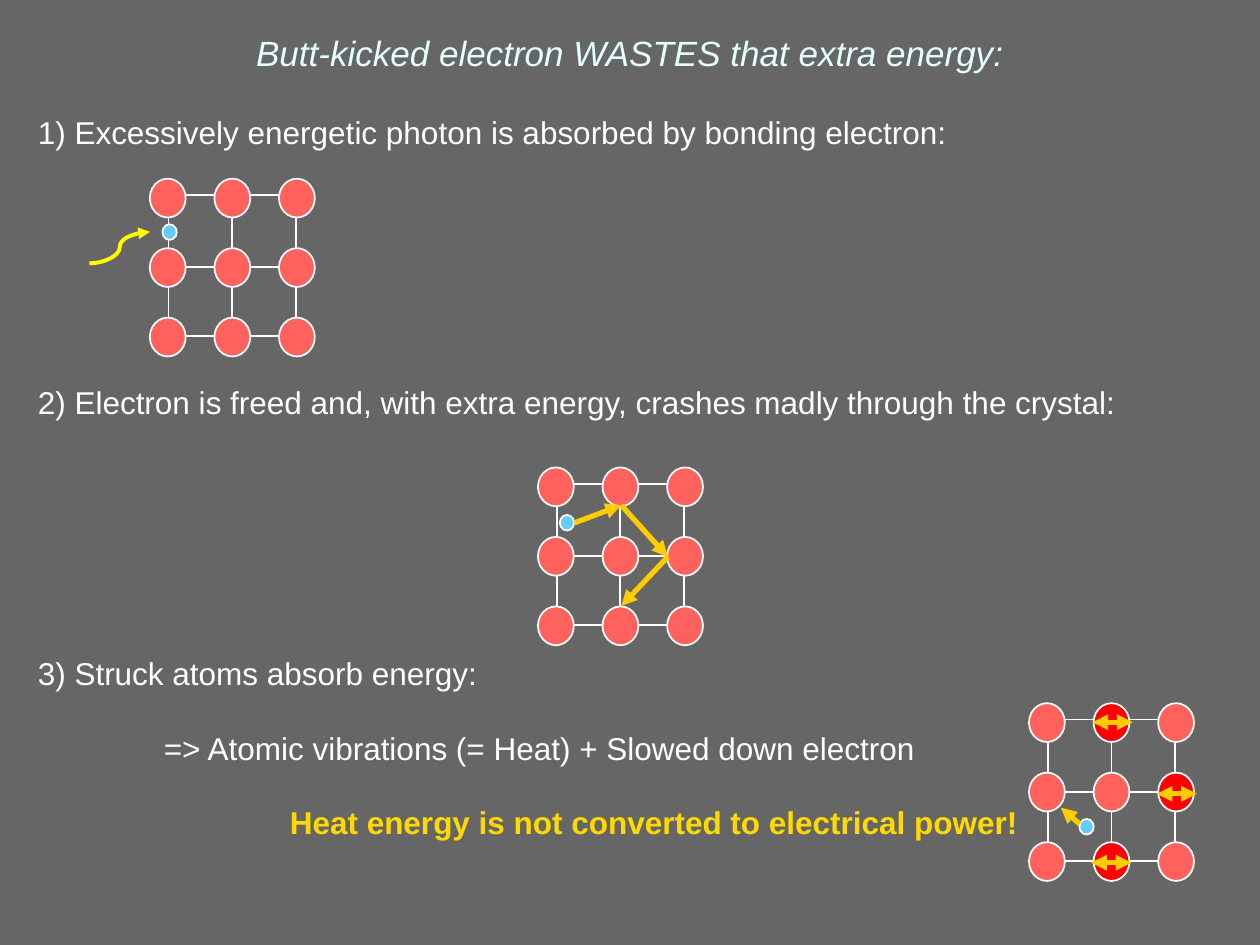
from pptx import Presentation
from pptx import util as u
from pptx.dml.color import RGBColor
from pptx.enum import shapes, text
from pptx.oxml.ns import qn
from lxml import etree

Pt = u.Pt
COLORS = {
    "background": "666666", "title": "E5FFFF", "body": "FFFFFF", "warning": "FFD900",
    "bond": "FFFFFF", "atom": "FF625C", "hot atom": "FF0000", "electron": "66CCFF",
    "photon": "FFFF00", "path": "FFCC00",
}
FONT = "Arial"

TITLE = "Butt-kicked electron WASTES that extra energy:"
# text, space before, left indent, format
STEPS = [
    ("1) Excessively energetic photon is absorbed by bonding electron:", 0, 0, {}),
    ("2) Electron is freed and, with extra energy, crashes madly through the crystal:",
     133, 0, {}),
    ("3) Struck atoms absorb energy:", 133, 0, {}),
    ("=> Atomic vibrations (= Heat) + Slowed down electron", 21, 72, {}),
    ("Heat energy is not converted to electrical power!", 21, 144,
     {"color": "warning", "bold": True}),
]

# Hot atoms are (column, row); arrows are (x1, y1, x2, y2)
CRYSTALS = [
    {"origin": (85.6, 102.1), "electron": (92.8, 128.2), "photon": (51.1, 150.5, 85.7, 132.5)},
    {"origin": (307.4, 267.1), "electron": (319.9, 294.3),
     "path": [(328.3, 298.8, 355, 288.7), (355, 288.7, 381.6, 318.2),
              (381.6, 318.2, 355, 346.3)]},
    {"origin": (588, 401.8), "electron": (616.8, 468),
     "hot": [(1, 0), (2, 1), (1, 2)],
     "path": [(617, 470.9, 606.2, 461.5)],
     "vibrations": [(647.3, 412.7, 624.2, 412.7), (646.6, 493, 623.5, 493),
                    (684, 453.6, 661, 453.6)]},
]
ATOM_SIZE = (20.5, 22.2)
ELECTRON_SIZE = (8.2, 8.9)
PITCH_X, PITCH_Y = 36.9, 39.7
# Bond lines, measured from the crystal's origin
ROW_BONDS, ROW_SPAN = (9.4, 50.6, 90.1), (9.4, 79.2)
COLUMN_BONDS, COLUMN_SPAN = (10.7, 47.1, 83.5), (9, 89)


def rgb(name):
    return RGBColor.from_string(COLORS[name])


def write(paragraph, content, size=18, color="body", bold=False, italic=False,
          align=text.PP_ALIGN.LEFT):
    paragraph.alignment = align
    run = paragraph.add_run()
    run.text = content
    font = run.font
    font.name, font.size, font.bold, font.italic = FONT, Pt(size), bold, italic
    font.color.rgb = rgb(color)


def set_frame(frame, anchor):
    frame.word_wrap = True
    frame.auto_size = text.MSO_AUTO_SIZE.NONE
    frame.vertical_anchor = anchor
    frame.margin_left = frame.margin_right = Pt(3.6)
    frame.margin_top = frame.margin_bottom = Pt(3.6)


def add_ball(group, left, top, size, color):
    ball = group.shapes.add_shape(shapes.MSO_SHAPE.OVAL, Pt(left), Pt(top),
                                  Pt(size[0]), Pt(size[1]))
    ball.shadow.inherit = False
    ball.fill.solid()
    ball.fill.fore_color.rgb = rgb(color)
    ball.line.color.rgb = rgb("bond")
    ball.line.width = Pt(1)


def add_line(group, ends, color, width, kind=shapes.MSO_CONNECTOR.STRAIGHT, arrows=()):
    """Draw a connector; arrows lists the ends (headEnd, tailEnd) with an arrowhead."""
    line = group.shapes.add_connector(kind, *map(Pt, ends))
    line.line.color.rgb = rgb(color)
    line.line.width = Pt(width)
    for end in arrows:
        etree.SubElement(line.line._get_or_add_ln(), qn(f"a:{end}"), type="triangle")
    etree.SubElement(line._element.spPr, qn("a:effectLst"))


def add_crystal(slide, crystal):
    group = slide.shapes.add_group_shape()
    left, top = crystal["origin"]
    for y in ROW_BONDS:
        start, stop = ROW_SPAN
        add_line(group, (left + start, top + y, left + stop, top + y), "bond", 1)
    for x in COLUMN_BONDS:
        start, stop = COLUMN_SPAN
        add_line(group, (left + x, top + start, left + x, top + stop), "bond", 1)
    for row in range(3):
        for column in range(3):
            hot = (column, row) in crystal.get("hot", [])
            add_ball(group, left + column * PITCH_X, top + row * PITCH_Y, ATOM_SIZE,
                     "hot atom" if hot else "atom")
    add_ball(group, *crystal["electron"], ELECTRON_SIZE, "electron")
    if "photon" in crystal:
        add_line(group, crystal["photon"], "photon", 2.25,
                 shapes.MSO_CONNECTOR.CURVE, ["tailEnd"])
    for ends in crystal.get("path", []):
        add_line(group, ends, "path", 3, arrows=["tailEnd"])
    for ends in crystal.get("vibrations", []):
        add_line(group, ends, "path", 3, arrows=["headEnd", "tailEnd"])


def main():
    deck = Presentation()
    deck.slide_width, deck.slide_height = Pt(720), Pt(540)
    slide = deck.slides.add_slide(deck.slide_layouts[5])
    slide.background.fill.solid()
    slide.background.fill.fore_color.rgb = rgb("background")

    title = slide.shapes.title
    title.left, title.top, title.width, title.height = Pt(24), Pt(6), Pt(672), Pt(48)
    set_frame(title.text_frame, text.MSO_ANCHOR.MIDDLE)
    write(title.text_frame.paragraphs[0], TITLE, size=20, color="title", italic=True,
          align=text.PP_ALIGN.CENTER)

    steps = slide.shapes.add_textbox(Pt(18), Pt(61), Pt(672), Pt(479)).text_frame
    set_frame(steps, text.MSO_ANCHOR.TOP)
    for index, (content, space, indent, style) in enumerate(STEPS):
        paragraph = steps.add_paragraph() if index else steps.paragraphs[0]
        paragraph.space_before = Pt(space)
        paragraph._p.get_or_add_pPr().set("marL", str(Pt(indent)))
        write(paragraph, content, **style)

    for crystal in CRYSTALS:
        add_crystal(slide, crystal)
    deck.save("out.pptx")


if __name__ == "__main__":
    main()
